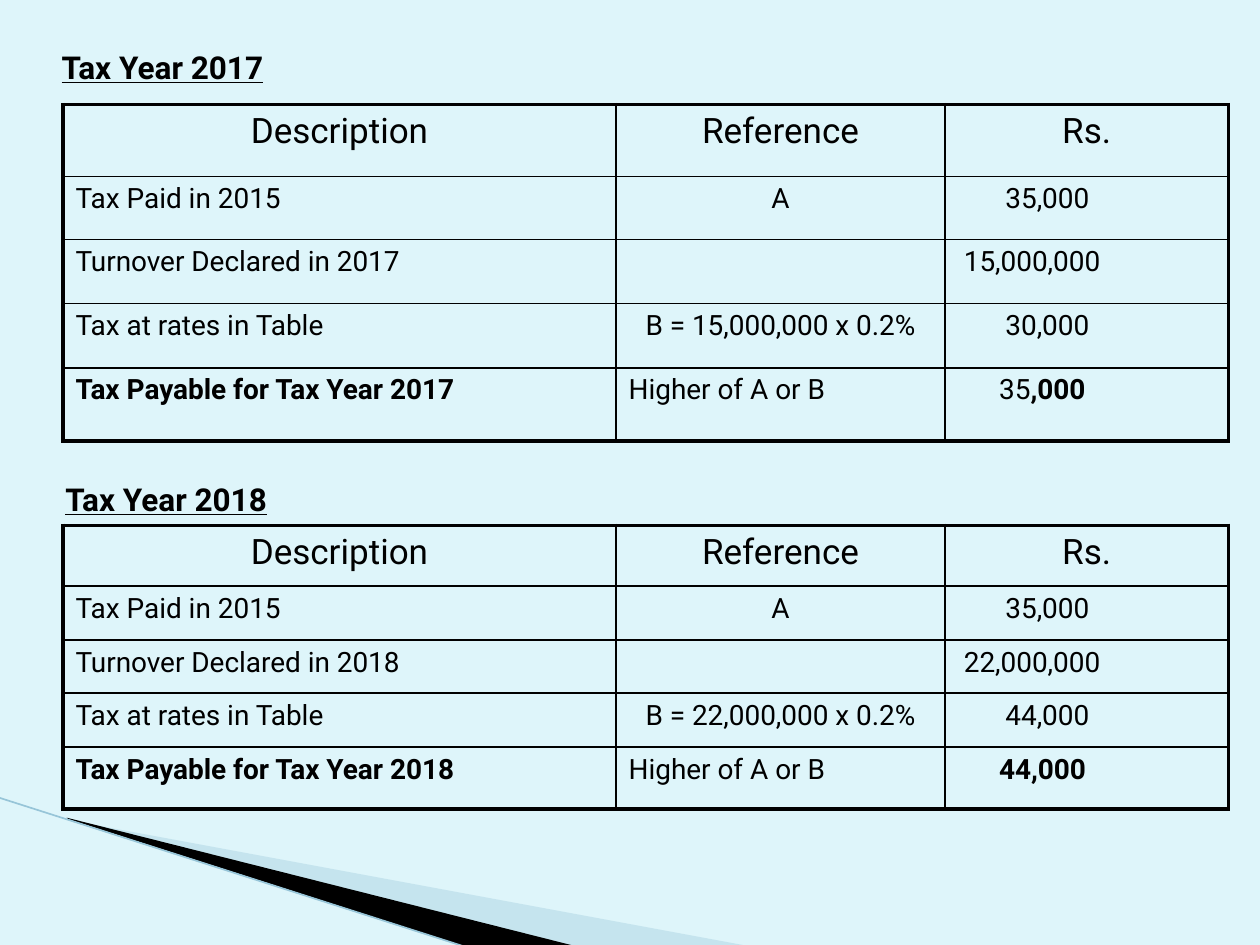
"""Build a slide with the minimum tax computation for tax years 2017 and 2018."""
from lxml.etree import SubElement
from pptx import Presentation
from pptx.dml.color import RGBColor
from pptx.enum.shapes import MSO_CONNECTOR
from pptx.enum.text import PP_ALIGN
from pptx.oxml.ns import qn
from pptx.util import Inches, Pt

BLACK = RGBColor(0x00, 0x00, 0x00)
PALE_BLUE = RGBColor(0xDE, 0xF5, 0xFA)
SOFT_BLUE = RGBColor(0xA0, 0xCB, 0xDC)
LINE_BLUE = RGBColor(0x97, 0xC5, 0xD8)

HEADING = {"name": "Roboto", "size": Pt(18), "bold": True, "underline": True}
HEADER = {"name": "Roboto", "size": Pt(20), "bold": False}
BODY = {"name": "Roboto", "size": Pt(16), "bold": False}
STRONG = {**BODY, "bold": True}


def add_span(para, text, style):
    span = para.add_run()
    span.text = text
    for key, value in style.items():
        setattr(span.font, key, value)
    span.font.color.rgb = BLACK


def add_border(cell, side, width):
    line = SubElement(cell._tc.get_or_add_tcPr(), qn(f"a:ln{side}"), w=str(Pt(width)))
    fill = SubElement(line, qn("a:solidFill"))
    SubElement(fill, qn("a:srgbClr"), val=str(BLACK))


deck = Presentation()
deck.slide_width, deck.slide_height = Inches(10), Inches(7.5)
page = deck.slides.add_slide(deck.slide_layouts[6])
page.background.fill.solid()
page.background.fill.fore_color.rgb = PALE_BLUE

wedges = [
    (SOFT_BLUE, 40, [(0.55, 6.51), (5.95, 7.51), (4.56, 7.51), (0.55, 6.5)]),
    (BLACK, 100, [(0.53, 6.49), (4.57, 7.51), (3.72, 7.52), (0.54, 6.5)]),
]
for color, opacity, points in wedges:
    corners = [(Inches(x), Inches(y)) for x, y in points]
    builder = page.shapes.build_freeform(*corners[0])
    builder.add_line_segments(corners[1:], close=True)
    wedge = builder.convert_to_shape()
    wedge.shadow.inherit = False
    wedge.fill.solid()
    wedge.fill.fore_color.rgb = color
    wedge.line.fill.background()
    if opacity < 100:
        shade = wedge._element.spPr.find(qn("a:solidFill"))[0]
        SubElement(shade, qn("a:alpha"), val=str(opacity * 1000))

edge = page.shapes.add_connector(
    MSO_CONNECTOR.STRAIGHT, Inches(-0.01), Inches(6.33), Inches(3.71), Inches(7.52)
)
edge.line.color.rgb = LINE_BLUE
edge.line.width = Pt(0.95)
SubElement(edge._element.spPr, qn("a:effectLst"))

column_widths = [4.39, 2.61, 2.25]
years = [
    {
        "year": 2017, "heading": (0.39, 0.33), "top": 0.83,
        "heights": [0.57, 0.5, 0.51, 0.51, 0.58],
        "turnover": "15,000,000", "tax": "30,000",
        "payable": [("35", BODY), (",000", STRONG)],
    },
    {
        "year": 2018, "heading": (0.42, 3.76), "top": 4.17,
        "heights": [0.48, 0.43, 0.42, 0.43, 0.49],
        "turnover": "22,000,000", "tax": "44,000",
        "payable": [("44,000", STRONG)],
    },
]
amount_indents = [0, 0.38, 0.05, 0.38, 0.33]
centered_references = 4

for item in years:
    year, turnover = item["year"], item["turnover"]
    rows = [
        [[(title, HEADER)] for title in ("Description", "Reference", "Rs.")],
        [[("Tax Paid in 2015", BODY)], [("A", BODY)], [("35,000", BODY)]],
        [[(f"Turnover Declared in {year}", BODY)], [], [(turnover, BODY)]],
        [[("Tax at rates in Table", BODY)], [(f"B = {turnover} x 0.2%", BODY)],
         [(item["tax"], BODY)]],
        [[(f"Tax Payable for Tax Year {year}", STRONG)], [("Higher of A or B", BODY)],
         item["payable"]],
    ]
    last_row, last_column = len(rows) - 1, len(column_widths) - 1
    table = page.shapes.add_table(
        len(rows), len(column_widths), Inches(0.5), Inches(item["top"]),
        Inches(sum(column_widths)), Inches(sum(item["heights"])),
    ).table
    table.first_row = table.horz_banding = False
    for column, width in zip(table.columns, column_widths):
        column.width = Inches(width)
    for r, (cells, height) in enumerate(zip(rows, item["heights"])):
        table.rows[r].height = Inches(height)
        for c, spans in enumerate(cells):
            cell = table.cell(r, c)
            outer = {"L": c == 0, "R": c == last_column, "T": r == 0, "B": r == last_row}
            for side, is_outer in outer.items():
                add_border(cell, side, 2.25 if is_outer else 1)
            cell.fill.background()
            if c == last_column:
                cell.margin_left = Inches(0.1 + amount_indents[r])
            para = cell.text_frame.paragraphs[0]
            if r == 0 or (c == 1 and r < centered_references):
                para.alignment = PP_ALIGN.CENTER
            for text, style in spans:
                add_span(para, text, style)

for item in years:
    left, top = item["heading"]
    box = page.shapes.add_textbox(Inches(left), Inches(top), Inches(2.03), Inches(0.4))
    box.text_frame.word_wrap = False
    add_span(box.text_frame.paragraphs[0], f"Tax Year {item['year']}", HEADING)

deck.save("out.pptx")
